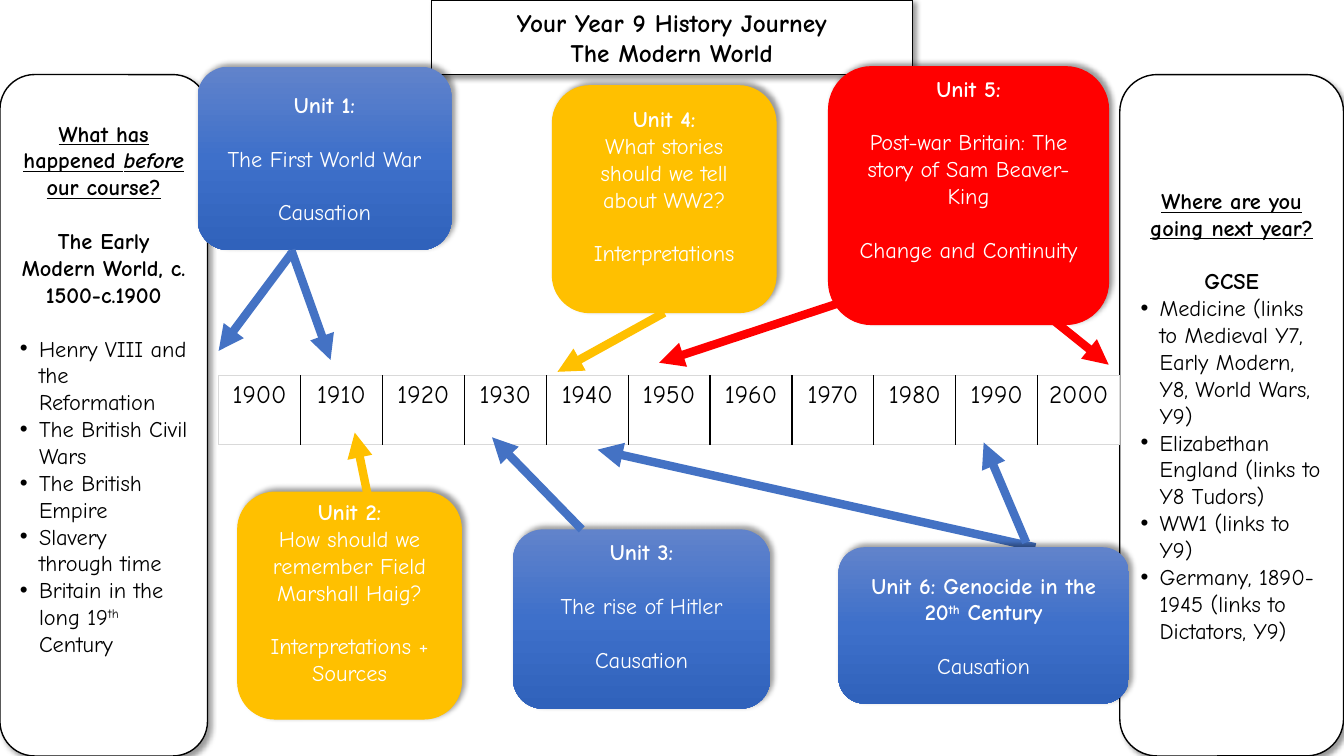
from lxml.etree import SubElement as Sub
from pptx import Presentation
from pptx.dml.color import RGBColor as Rgb
from pptx.enum.shapes import MSO_CONNECTOR as Link, MSO_SHAPE as Form
from pptx.enum.text import MSO_ANCHOR as Anchor, PP_ALIGN as Align
from pptx.oxml import parse_xml
from pptx.oxml.ns import nsdecls, qn
from pptx.util import Cm, Pt

HUES = {
    "black": "000000", "white": "FFFFFF", "grey": "D9D9D9", "blue": "4472C4",
    "gold": "FFC000", "red": "FF0000",
    "top": "6183CB", "mid": "3E70CA", "low": "3062BB",
}
FONT = "Comic Neue"
GAP = 19.2  # height of one 16 pt line


def hue(name):
    return Rgb.from_string(HUES[name])


def write(frame, text, size=16, color="black", bold=False, line=False,
          mark="sup", gap=False, dot=False):
    """Add one paragraph; parts between bars are raised or set in italics."""
    para = frame.paragraphs[0]
    if para.runs:
        para = frame.add_paragraph()
    para.alignment = Align.LEFT if dot else Align.CENTER
    para.line_spacing = 1.0
    para.space_before = Pt(GAP if gap else 0)
    if dot:
        props = para._p.get_or_add_pPr()
        props.set("marL", str(Cm(0.48)))
        props.set("indent", str(-Cm(0.48)))
        Sub(props, qn("a:buFont"), typeface="Arial")
        Sub(props, qn("a:buChar"), char="•")
    for i, part in enumerate(text.split("|")):
        run = para.add_run()
        run.text = part
        font = run.font
        font.name, font.size, font.bold = FONT, Pt(size), bold
        font.underline = line
        font.color.rgb = hue(color)
        if i % 2 and mark == "sup":
            run._r.get_or_add_rPr().set("baseline", "30000")
        elif i % 2:
            font.italic = True


class Board:
    def __init__(self, deck):
        self.slide = deck.slides.add_slide(deck.slide_layouts[5])
        self.shapes = self.slide.shapes

    def shade(self, shape, angle):
        fx = Sub(shape._element.spPr, qn("a:effectLst"))
        cast = Sub(fx, qn("a:outerShdw"), blurRad=str(Pt(4)), dist=str(Pt(3)),
                   dir=str(angle * 60000), algn="ctr", rotWithShape="0")
        tint = Sub(cast, qn("a:srgbClr"), val=HUES["black"])
        Sub(tint, qn("a:alpha"), val="40000")

    def frame(self, shape, tail=0):
        """Set up the text area; tail is the number of lines kept free below."""
        text = shape.text_frame
        text.word_wrap = True
        text.vertical_anchor = Anchor.MIDDLE
        text.margin_left = text.margin_right = Cm(0.25)
        text.margin_top = Cm(0.13)
        text.margin_bottom = Cm(0.13) + Pt(GAP * tail)
        return text

    def paint(self, shape, fill, edge, width):
        shape.fill.solid()
        shape.fill.fore_color.rgb = hue(fill)
        shape.line.color.rgb = hue(edge)
        shape.line.width = Pt(width)

    def title(self, box, lines):
        shape = self.shapes.title
        shape.left, shape.top, shape.width, shape.height = map(Cm, box)
        shape._element.spPr.append(parse_xml(
            f'<a:prstGeom {nsdecls("a")} prst="roundRect"><a:avLst/></a:prstGeom>'))
        self.paint(shape, "white", "black", 1)
        self.shade(shape, 45)
        text = self.frame(shape)
        for item in lines:
            write(text, item, size=18, bold=True)

    def round(self, box):
        shape = self.shapes.add_shape(Form.ROUNDED_RECTANGLE, *map(Cm, box))
        shape.shadow.inherit = False
        shape._element.spPr.remove(shape._element.spPr.find(qn("a:effectLst")))
        return shape

    def panel(self, box, heads, items, tail=0):
        shape = self.round(box)
        self.paint(shape, "white", "black", 1)
        self.shade(shape, 45)
        text = self.frame(shape, tail)
        ask, topic, gap = heads
        write(text, ask, bold=True, line=True, mark="italic")
        write(text, topic, bold=True, gap=True)
        for i, item in enumerate(items):
            write(text, item, dot=True, gap=gap and i == 0)

    def unit(self, box, color, head, *rest, tail=0, tight=False):
        """Draw a unit card; tight puts the second paragraph right below the head."""
        shape = self.round(box)
        if color == "blue":
            shape.line.fill.background()
            stops = "".join(
                f'<a:gs pos="{i * 50000}"><a:srgbClr val="{HUES[name]}"/></a:gs>'
                for i, name in enumerate(("top", "mid", "low")))
            shape._element.spPr.find(qn("a:prstGeom")).addnext(parse_xml(
                f'<a:gradFill {nsdecls("a")}><a:gsLst>{stops}</a:gsLst>'
                '<a:lin ang="5400000" scaled="0"/></a:gradFill>'))
        else:
            self.paint(shape, color, color, 0.75)
        self.shade(shape, 315)
        text = self.frame(shape, tail)
        write(text, head, color="white", bold=True)
        for i, item in enumerate(rest):
            write(text, item, color="white", gap=i > 0 or not tight)
        return shape

    def arrow(self, color, *ends, start=None):
        line = self.shapes.add_connector(Link.STRAIGHT, *map(Cm, ends))
        if start:
            line.begin_connect(start, 2)
        line.line.color.rgb = hue(color)
        line.line.width = Pt(6)
        Sub(line.line._get_or_add_ln(), qn("a:tailEnd"), type="triangle")
        Sub(line._element.spPr, qn("a:effectLst"))

    def years(self, box, dates):
        table = self.shapes.add_table(1, len(dates), *map(Cm, box)).table
        table.first_row = table.horz_banding = False
        last = len(dates) - 1
        for i, date in enumerate(dates):
            table.columns[i].width = Cm(box[2] / len(dates))
            cell = table.cell(0, i)
            write(cell.text_frame, str(date), size=18)
            props = cell._tc.get_or_add_tcPr()
            outer = {"lnL": i == 0, "lnR": i == last, "lnT": True, "lnB": True}
            for side, rim in outer.items():
                edge = Sub(props, qn(f"a:{side}"), w=str(Pt(1)))
                fill = Sub(edge, qn("a:solidFill"))
                Sub(fill, qn("a:srgbClr"), val=HUES["grey" if rim else "black"])
            cell.fill.solid()
            cell.fill.fore_color.rgb = hue("white")


def main():
    deck = Presentation()
    deck.slide_width, deck.slide_height = Cm(33.87), Cm(19.05)
    board = Board(deck)
    board.title((10.87, 0, 12.12, 1.88),
                ("Your Year 9 History Journey", "The Modern World"))
    board.panel((0, 1.88, 5.23, 17.17),
                ("What has |happened before| our course?".replace(
                    "|happened before|", "happened |before|"),
                 "The Early Modern World, c. 1500-c.1900", True),
                ("Henry VIII and the Reformation", "The British Civil Wars",
                 "The British Empire", "Slavery through time",
                 "Britain in the long 19|th| Century"), tail=2)
    board.panel((28.22, 1.88, 5.64, 17.17),
                ("Where are you going next year?", "GCSE", False),
                ("Medicine (links to Medieval Y7, Early Modern, Y8, World Wars, Y9)",
                 "Elizabethan England (links to Y8 Tudors)", "WW1 (links to Y9)",
                 "Germany, 1890-1945 (links to Dictators, Y9)"))
    board.years((5.51, 9.47, 22.71, 1.73), range(1900, 2001, 10))

    board.unit((4.98, 1.68, 6.4, 4.62), "blue",
               "Unit 1:", "The First World War", "Causation")
    board.arrow("blue", 7.34, 6.3, 8.33, 9.07)
    board.arrow("blue", 7.37, 6.35, 5.51, 8.84)
    board.unit((12.93, 13.34, 6.48, 4.52), "blue",
               "Unit 3:", "The rise of Hitler", "Causation", tail=1)
    board.arrow("blue", 14.66, 13.34, 12.4, 11.02)
    four = board.unit((13.92, 2.16, 5.64, 5.72), "gold", "Unit 4:",
                      "What stories should we tell about WW2?",
                      "Interpretations", tail=1, tight=True)
    board.arrow("gold", 16.74, 7.88, 14.05, 9.37, start=four)
    board.arrow("blue", 26.09, 13.79, 15.06, 11.33)
    board.unit((21.13, 13.79, 7.32, 3.94), "blue",
               "Unit 6: Genocide in the 20|th| Century", "Causation")
    board.arrow("blue", 25.86, 13.67, 24.79, 11.15)
    board.unit((20.88, 1.68, 7.06, 6.5), "red", "Unit 5:",
               "Post-war Britain: The story of Sam Beaver-King",
               "Change and Continuity", tail=2)
    board.arrow("red", 21.29, 7.59, 16.61, 9.14)
    board.arrow("red", 25.7, 7.39, 27.94, 9.19)
    board.unit((5.99, 12.4, 5.64, 5.72), "gold", "Unit 2:",
               "How should we remember Field Marshall Haig?",
               "Interpretations + Sources", tail=1, tight=True)
    board.arrow("gold", 9.27, 12.5, 8.94, 10.9)
    deck.save("out.pptx")


if __name__ == "__main__":
    main()
